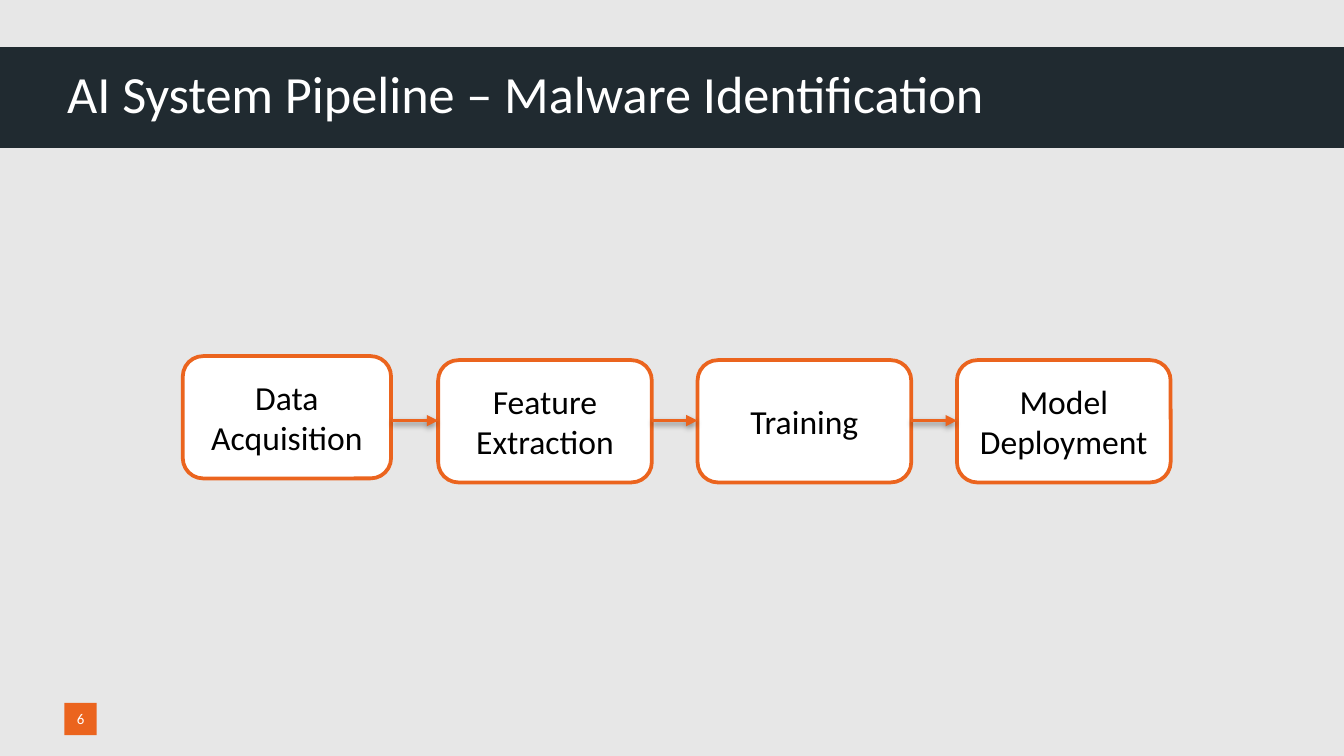
from lxml.etree import SubElement
from pptx import Presentation
from pptx.dml.color import RGBColor
from pptx.enum.shapes import MSO_CONNECTOR, MSO_SHAPE
from pptx.enum.text import MSO_ANCHOR, PP_ALIGN
from pptx.oxml import parse_xml
from pptx.oxml.ns import nsdecls, qn
from pptx.util import Inches, Pt

BACKGROUND = RGBColor(0xE7, 0xE7, 0xE7)
NAVY = RGBColor(0x20, 0x2A, 0x30)
ORANGE = RGBColor(0xEB, 0x64, 0x1E)
WHITE = RGBColor(0xFF, 0xFF, 0xFF)
BLACK = RGBColor(0x00, 0x00, 0x00)
FONT = "Calibri"
LINE_WIDTH = Pt(2)
SHADOW = (
    f'<a:effectLst {nsdecls("a")}>'
    '<a:outerShdw blurRad="39370" dist="20320" dir="5400000" rotWithShape="0">'
    '<a:srgbClr val="000000"><a:alpha val="38000"/></a:srgbClr>'
    '</a:outerShdw></a:effectLst>'
)


class PipelineSlide:
    """Holds the style and the current page; lengths are percent of its size."""

    def __init__(self, deck):
        self.width, self.height = deck.slide_width, deck.slide_height
        self.page = deck.slides.add_slide(deck.slide_layouts[5])
        fill = self.page.background.fill
        fill.solid()
        fill.fore_color.rgb = BACKGROUND

    def across(self, share):
        return round(self.width * share / 100)

    def down(self, share):
        return round(self.height * share / 100)

    def place(self, left, top, width, height):
        return (self.across(left), self.down(top),
                self.across(width), self.down(height))

    def add_text(self, box, lines, size, color, align, inset=None):
        frame = box.text_frame
        frame.word_wrap = True
        frame.vertical_anchor = MSO_ANCHOR.MIDDLE
        if inset is not None:
            frame.margin_left = frame.margin_right = inset
            frame.margin_top = frame.margin_bottom = inset
        for index, line in enumerate(lines):
            para = frame.add_paragraph() if index else frame.paragraphs[0]
            para.alignment = align
            span = para.add_run()
            span.text = line
            span.font.name = FONT
            span.font.size = Pt(size)
            span.font.color.rgb = color

    def title(self, text, area):
        box = self.page.shapes.title
        box.left, box.top, box.width, box.height = self.place(*area)
        self.add_text(box, [text], 28, WHITE, PP_ALIGN.LEFT, inset=0)

    def shape(self, kind, area, fill, line=None):
        box = self.page.shapes.add_shape(kind, *self.place(*area))
        box.shadow.inherit = False
        box.fill.solid()
        box.fill.fore_color.rgb = fill
        if line is None:
            box.line.fill.background()
        else:
            box.line.color.rgb = line
            box.line.width = LINE_WIDTH
        return box

    def band(self, area):
        box = self.shape(MSO_SHAPE.RECTANGLE, area, NAVY)
        # Send the band behind the title
        self.page.shapes.title.element.addprevious(box.element)

    def number(self, text, area):
        box = self.shape(MSO_SHAPE.RECTANGLE, area, ORANGE)
        self.add_text(box, [text], 8, WHITE, PP_ALIGN.CENTER, inset=0)

    def stage(self, lines, area):
        box = self.shape(MSO_SHAPE.ROUNDED_RECTANGLE, area, WHITE, ORANGE)
        self.add_text(box, lines, 18, BLACK, PP_ALIGN.CENTER)

    def arrow(self, start, end, level):
        arrow = self.page.shapes.add_connector(
            MSO_CONNECTOR.STRAIGHT, self.across(start), self.down(level),
            self.across(end), self.down(level))
        arrow.line.color.rgb = ORANGE
        arrow.line.width = LINE_WIDTH
        properties = arrow.element.spPr
        SubElement(properties.find(qn("a:ln")), qn("a:tailEnd"), type="triangle")
        properties.append(parse_xml(SHADOW))


def main():
    deck = Presentation()
    deck.slide_width = Inches(10)
    deck.slide_height = deck.slide_width * 9 // 16
    slide = PipelineSlide(deck)

    # Header and page number
    slide.band((0, 6.22, 100, 13.33))
    slide.title("AI System Pipeline – Malware Identification",
                (5, 5.51, 75.9, 13.51))
    slide.number("6", (4.8, 92.98, 2.4, 4.27))

    # Pipeline stages: the first is slightly narrower and higher
    stage_height = 16.18
    slide.stage(["Data Acquisition"], (13.6, 47.11, 15.5, stage_height))
    first, pitch, width, gap = 32.6, 19.3, 15.9, 3.4
    later_stages = [["Feature", "Extraction"], ["Training"], ["Model Deployment"]]
    lefts = [first + pitch * index for index in range(len(later_stages))]
    for left, lines in zip(lefts, later_stages):
        slide.stage(lines, (left, 47.64, width, stage_height))

    # Arrows, each ending at the left edge of a stage
    for left in lefts:
        slide.arrow(left - gap, left, 55.64)

    deck.save("out.pptx")


if __name__ == "__main__":
    main()
